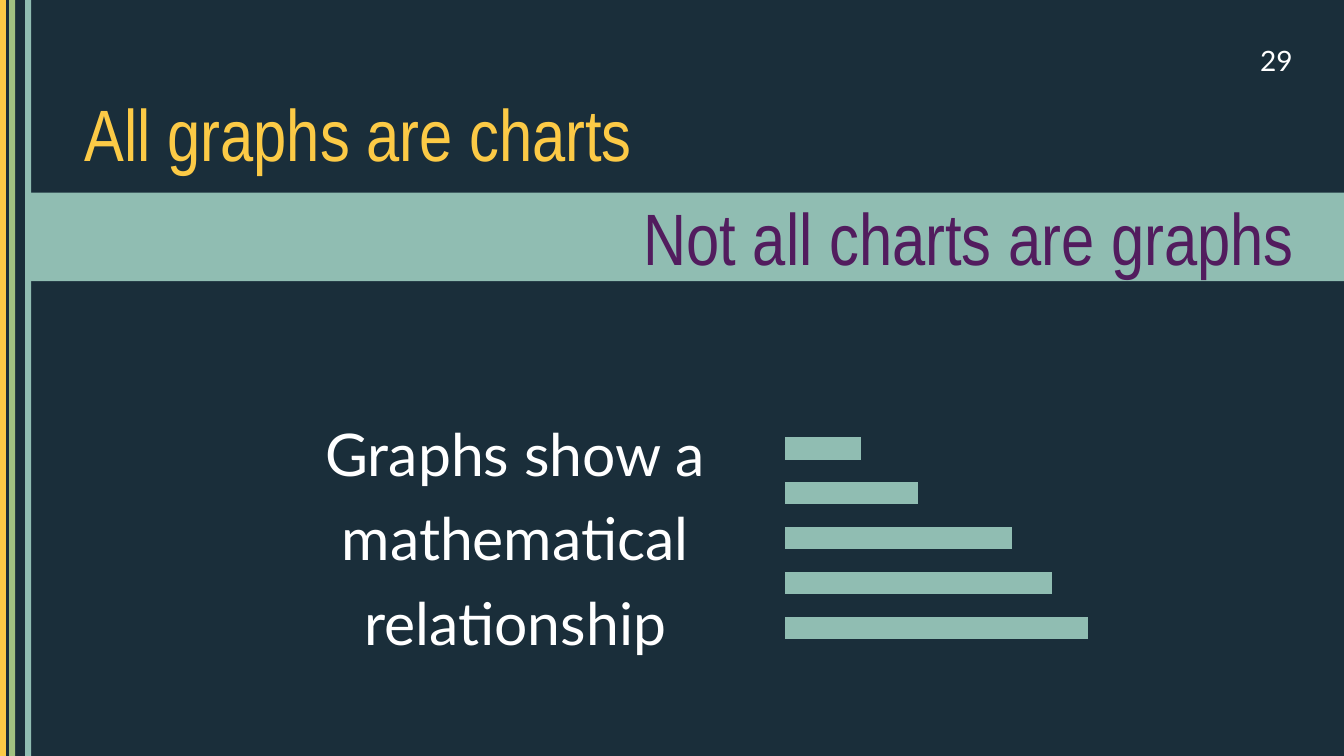
import pptx
import pptx.chart.data
import pptx.dml.color
import pptx.enum.chart
import pptx.enum.shapes
import pptx.enum.text
import pptx.util

Inches = pptx.util.Inches
RGBColor = pptx.dml.color.RGBColor
PP_ALIGN = pptx.enum.text.PP_ALIGN
MSO_ANCHOR = pptx.enum.text.MSO_ANCHOR

NAVY = RGBColor(0x1A, 0x2E, 0x3A)
TEAL = RGBColor(0x90, 0xBD, 0xB2)
YELLOW = RGBColor(0xFC, 0xCA, 0x46)
GREEN = RGBColor(0xA1, 0xC1, 0x81)
PURPLE = RGBColor(0x52, 0x1C, 0x5E)
WHITE = RGBColor(0xFF, 0xFF, 0xFF)

HEADING_FONT = "Arial Narrow"
BODY_FONT = "Lato"


def add_bar(slide, left, top, width, height, color):
    sp = slide.shapes.add_shape(
        pptx.enum.shapes.MSO_SHAPE.RECTANGLE,
        Inches(left), Inches(top), Inches(width), Inches(height))
    sp.shadow.inherit = False
    sp.fill.solid()
    sp.fill.fore_color.rgb = color
    sp.line.fill.background()
    return sp


def add_box(slide, left, top, width, height):
    return slide.shapes.add_textbox(
        Inches(left), Inches(top), Inches(width), Inches(height))


def set_text(sp, text, font, size, color, align=PP_ALIGN.LEFT,
             anchor=MSO_ANCHOR.TOP, insets=(0.1, 0.05, 0.1, 0.05)):
    """Fill a shape with one paragraph; insets are left, top, right, bottom."""
    tf = sp.text_frame
    tf.word_wrap = True
    tf.vertical_anchor = anchor
    tf.margin_left, tf.margin_top, tf.margin_right, tf.margin_bottom = map(Inches, insets)
    p = tf.paragraphs[0]
    p.text = text
    p.alignment = align
    p.font.name = font
    p.font.size = pptx.util.Pt(size)
    p.font.color.rgb = color
    return p


def add_bar_chart(slide, left, top, width, height, values):
    data = pptx.chart.data.CategoryChartData()
    data.categories = [str(i + 1) for i in range(len(values))]
    data.add_series("Series 1", values)
    chart = slide.shapes.add_chart(
        pptx.enum.chart.XL_CHART_TYPE.BAR_STACKED,
        Inches(left), Inches(top), Inches(width), Inches(height), data).chart
    chart.has_legend = False
    chart.has_title = False
    chart.font.name = BODY_FONT
    chart.font.size = pptx.util.Pt(10)
    chart.font.color.rgb = RGBColor(0, 0, 0)
    chart.category_axis.visible = False
    axis = chart.value_axis
    axis.visible = False
    axis.has_major_gridlines = False
    axis.minimum_scale, axis.maximum_scale, axis.major_unit = 0, 125, 31
    plot = chart.plots[0]
    plot.vary_by_categories = False
    plot.gap_width = plot.overlap = 100
    fill = plot.series[0].format.fill
    fill.solid()
    fill.fore_color.rgb = TEAL
    set_plot_area(chart, x=0.036, y=0.059, w=0.945, h=0.84)


def set_plot_area(chart, **fractions):
    """Fix the inner plot area as fractions of the chart frame."""
    plot_area = chart.plots[0]._element.getparent()
    for old in plot_area.findall(pptx.oxml.ns.qn("c:layout")):
        plot_area.remove(old)
    modes = '<c:layoutTarget val="inner"/><c:xMode val="edge"/><c:yMode val="edge"/>'
    sizes = "".join(f'<c:{k} val="{v}"/>' for k, v in fractions.items())
    plot_area.insert(0, pptx.oxml.parse_xml(
        f'<c:layout {pptx.oxml.ns.nsdecls("c")}>'
        f'<c:manualLayout>{modes}{sizes}</c:manualLayout></c:layout>'))


def main():
    prs = pptx.Presentation()
    prs.slide_width, prs.slide_height = Inches(13.33), Inches(7.5)
    s = prs.slides.add_slide(prs.slide_layouts[6])
    s.background.fill.solid()
    s.background.fill.fore_color.rgb = NAVY

    for left, color in ((0.25, TEAL), (0, YELLOW), (0.09, GREEN)):
        add_bar(s, left, 0, 0.06, 7.5, color)

    set_text(add_box(s, 0.27, 0.88, 13.06, 0.8), "All graphs are charts",
             HEADING_FONT, 52, YELLOW, insets=(0.57, 0, 0, 0))
    set_text(add_bar(s, 0.27, 1.91, 13.06, 0.88, TEAL), "Not all charts are graphs",
             HEADING_FONT, 52, PURPLE, PP_ALIGN.RIGHT, MSO_ANCHOR.MIDDLE, (0, 0, 0.5, 0))
    p = set_text(add_box(s, 2.03, 3.95, 6.16, 2.58), "Graphs show a mathematical relationship",
                 BODY_FONT, 42, WHITE, PP_ALIGN.CENTER)
    p.line_spacing = 1.2
    add_bar_chart(s, 7.64, 4.07, 3.98, 2.65, (100, 88, 75, 44, 25))
    set_text(add_box(s, 12.4, 0.38, 0.93, 0.73), "29", BODY_FONT, 20, WHITE)

    prs.save("out.pptx")


if __name__ == "__main__":
    main()
